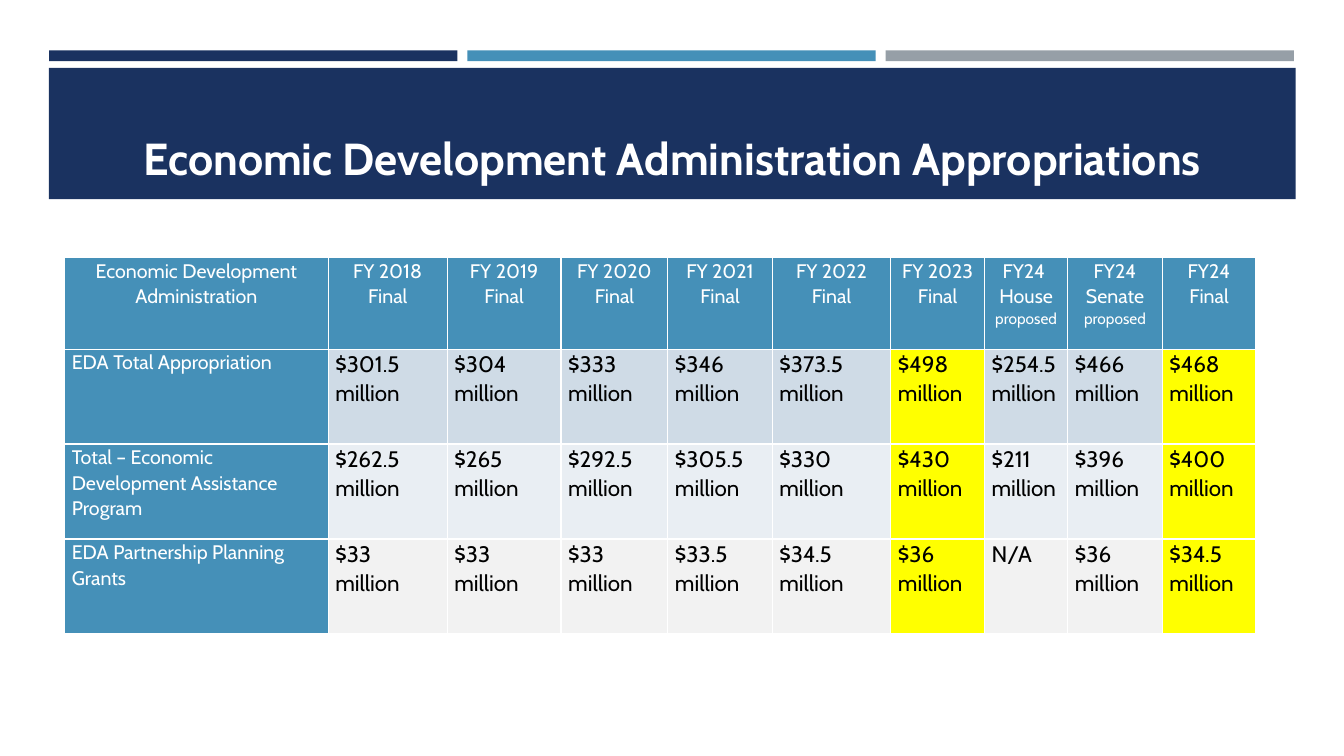
from pptx import Presentation
from pptx.dml.color import RGBColor
from pptx.enum.shapes import MSO_SHAPE
from pptx.enum.text import MSO_ANCHOR, PP_ALIGN
from pptx.util import Cm, Pt

RECT = MSO_SHAPE.RECTANGLE
BOTTOM = MSO_ANCHOR.BOTTOM
CENTER, LEFT = PP_ALIGN.CENTER, PP_ALIGN.LEFT

FONT = "Cabin"
NAVY, BLUE, GREY = "1A3260", "4590B8", "969FA7"
WHITE, BLACK, YELLOW = "FFFFFF", "000000", "FFFF00"

TITLE = "Economic Development Administration Appropriations"
HEADS = [
    "Economic Development Administration",
    "FY 2018\nFinal", "FY 2019\nFinal", "FY 2020\nFinal", "FY 2021\nFinal",
    "FY 2022\nFinal", "FY 2023\nFinal",
    "FY24\u00a0\nHouse\nproposed", "FY24\nSenate\nproposed", "FY24\nFinal",
]
# Label, row fill, amounts in millions of dollars
ROWS = [
    ("EDA Total Appropriation", "CFDBE6",
     ["301.5", "304", "333", "346", "373.5", "498", "254.5", "466", "468"]),
    ("Total – Economic Development Assistance Program", "E9EEF3",
     ["262.5", "265", "292.5", "305.5", "330", "430", "211", "396", "400"]),
    ("EDA Partnership Planning Grants", "F2F2F2",
     ["33", "33", "33", "33.5", "34.5", "36", None, "36", "34.5"]),
]
MARKED = (6, 9)
WIDTHS = [6.64, 3, 2.87, 2.69, 2.63, 2.99, 2.36, 2.1, 2.38, 2.36]
HEIGHTS = [2.31, 2.39, 2.39, 2.39]


def color(code):
    return RGBColor.from_string(code)


def add_bar(shapes, left, top, width, height, fill):
    bar = shapes.add_shape(RECT, Cm(left), Cm(top), Cm(width), Cm(height))
    bar.shadow.inherit = False
    bar.fill.solid()
    bar.fill.fore_color.rgb = color(fill)
    bar.line.fill.background()


def style(par, size, ink, align, bold=False):
    par.alignment = align
    font = par.font
    font.name, font.size, font.bold = FONT, Pt(size), bold
    font.color.rgb = color(ink)


def fill_cell(cell, text, fill, size, ink, align=LEFT):
    cell.fill.solid()
    cell.fill.fore_color.rgb = color(fill)
    cell.margin_left = cell.margin_right = Cm(0.18)
    cell.margin_top = cell.margin_bottom = 0
    cell.text = text
    for par in cell.text_frame.paragraphs:
        style(par, 11 if par.text == "proposed" else size, ink, align)
        par.line_spacing = 1.07


def add_title(shapes):
    box = shapes.add_textbox(Cm(1.63), Cm(1.96), Cm(30.63), Cm(2.82))
    frame = box.text_frame
    frame.word_wrap = True
    frame.vertical_anchor = BOTTOM
    frame.text = TITLE
    style(frame.paragraphs[0], 32, WHITE, CENTER, True)


def add_grid(shapes):
    grid = shapes.add_table(
        len(HEIGHTS), len(WIDTHS), Cm(1.63), Cm(6.49),
        Cm(sum(WIDTHS)), Cm(sum(HEIGHTS))).table
    grid.first_row = False
    for col, width in zip(grid.columns, WIDTHS):
        col.width = Cm(width)
    for row, height in zip(grid.rows, HEIGHTS):
        row.height = Cm(height)
    for c, head in enumerate(HEADS):
        fill_cell(grid.cell(0, c), head, BLUE, 14, WHITE, CENTER)
    for r, (label, tint, sums) in enumerate(ROWS, 1):
        fill_cell(grid.cell(r, 0), label, BLUE, 14, WHITE)
        for c, num in enumerate(sums, 1):
            text = f"${num}\nmillion" if num else "N/A"
            fill = YELLOW if c in MARKED else tint
            fill_cell(grid.cell(r, c), text, fill, 16, BLACK)


def main():
    deck = Presentation()
    deck.slide_width, deck.slide_height = Cm(33.87), Cm(19.05)
    shapes = deck.slides.add_slide(deck.slide_layouts[6]).shapes
    for i, fill in enumerate((NAVY, BLUE, GREY)):
        add_bar(shapes, 1.24 + i * 10.54, 1.27, 10.29, 0.27, fill)
    add_bar(shapes, 1.23, 1.71, 31.42, 3.31, NAVY)
    add_title(shapes)
    add_grid(shapes)
    deck.save("out.pptx")


if __name__ == "__main__":
    main()
